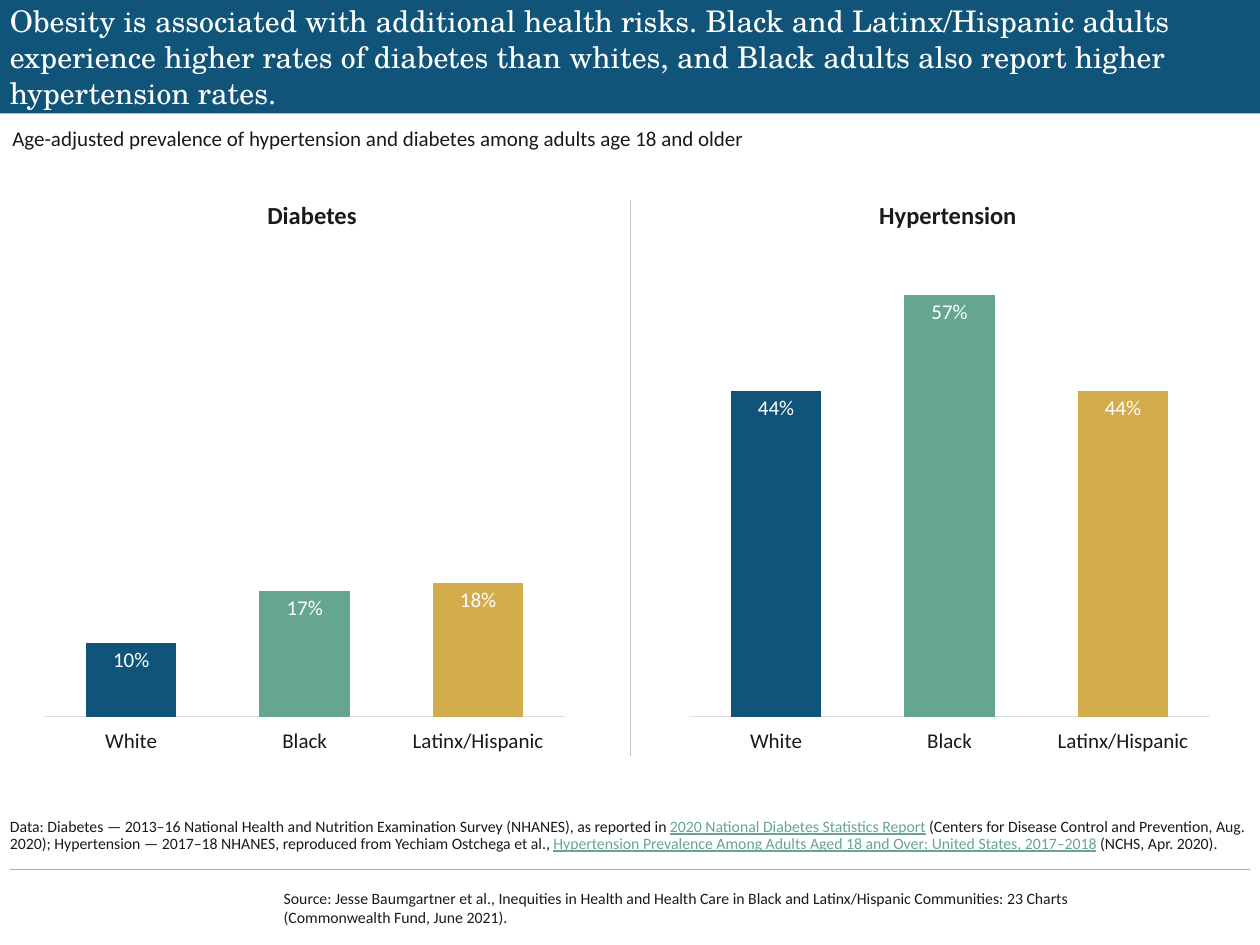
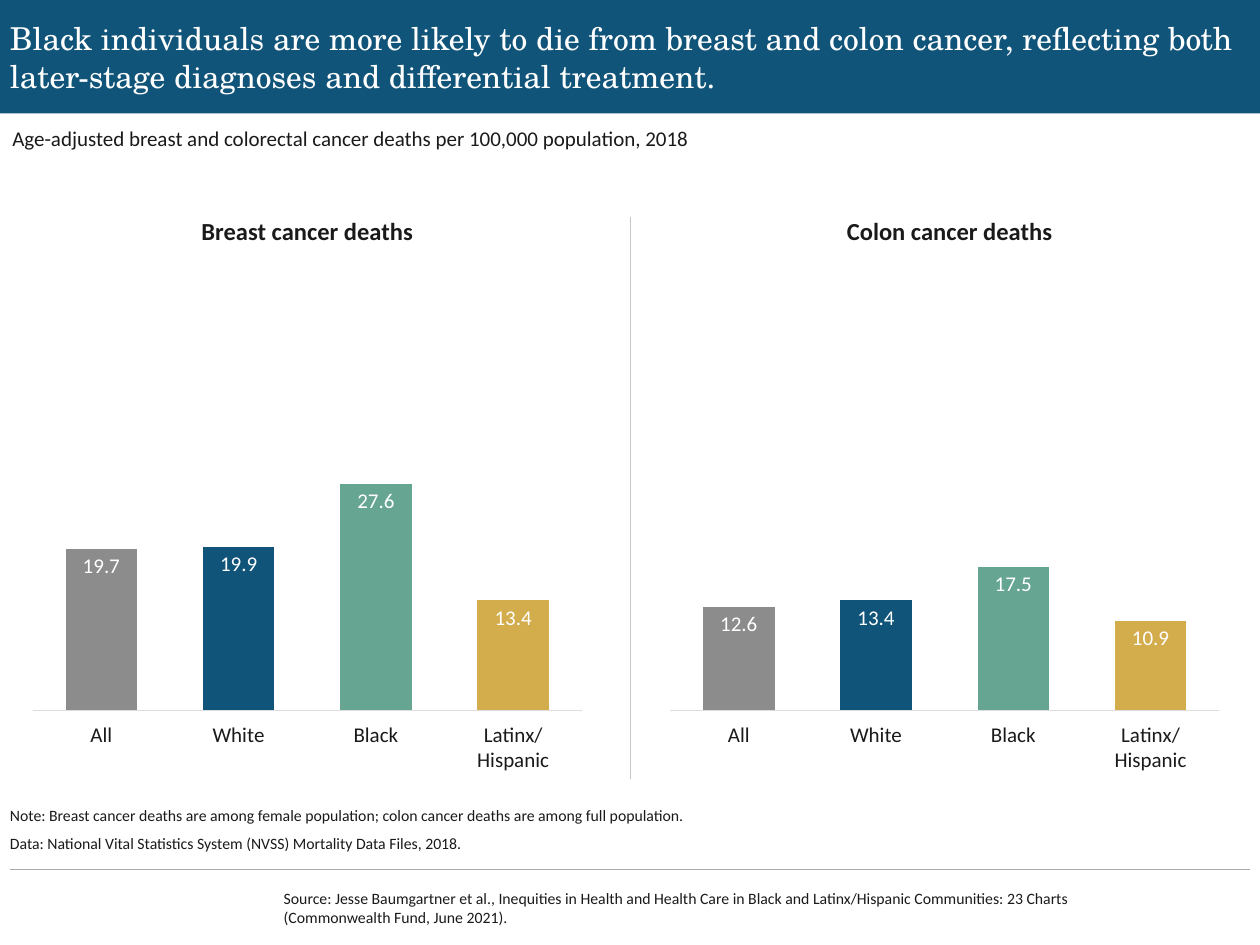
from dataclasses import dataclass
from pptx import Presentation
from pptx.chart.data import CategoryChartData
from pptx.dml.color import RGBColor
from pptx.enum.chart import XL_CHART_TYPE, XL_LABEL_POSITION, XL_TICK_LABEL_POSITION, XL_TICK_MARK
from pptx.enum.shapes import MSO_CONNECTOR, MSO_SHAPE
from pptx.enum.text import MSO_ANCHOR, MSO_AUTO_SIZE, PP_ALIGN
from pptx.oxml.xmlchemy import OxmlElement
from pptx.util import Cm, Pt


@dataclass(frozen=True)
class Theme:
    sans: str = "Calibri"
    serif: str = "TeX Gyre Schola"
    ink: str = "1A1A1A"
    white: str = "FFFFFF"
    navy: str = "115479"
    green: str = "65A591"
    gold: str = "D3AC4C"
    gray: str = "8C8C8C"
    axis: str = "DDDDDD"
    rule: str = "ABABAB"
    split: str = "C6C6C6"
    small: int = 9
    body: int = 12
    head: int = 14


THEME = Theme()
WIDTH, HEIGHT, EDGE = 25.4, 19.05, 0.2
INNER = WIDTH - 2 * EDGE
BAND = (EDGE, 0, INNER, 2.29)
NOTES = (EDGE, 15.82, INNER, 1.37)
SOURCE = (
    "Source: Jesse Baumgartner et al., Inequities in Health and Health Care in Black and "
    "Latinx/Hispanic Communities: 23 Charts (Commonwealth Fund, June 2021)."
)
HUES = {
    "All": THEME.gray,
    "White": THEME.navy,
    "Black": THEME.green,
    "Latinx/Hispanic": THEME.gold,
    "Latinx/\nHispanic": THEME.gold,
}


def paint(part, hue):
    part.solid()
    part.fore_color.rgb = RGBColor.from_string(hue)


def style(font, size, hue, face=THEME.sans, bold=False):
    font.name, font.size, font.bold = face, Pt(size), bold
    font.color.rgb = RGBColor.from_string(hue)


def place(shape, box):
    shape.left, shape.top, shape.width, shape.height = map(Cm, box)


def text(shape, lines, size=THEME.body, hue=THEME.ink, face=THEME.sans, bold=False,
         align=PP_ALIGN.LEFT, anchor=MSO_ANCHOR.TOP, inset=True, lead=1.0, after=0):
    frame = shape.text_frame
    frame.word_wrap = True
    frame.auto_size = MSO_AUTO_SIZE.NONE
    frame.vertical_anchor = anchor
    if not inset:
        frame.margin_left = frame.margin_right = frame.margin_top = frame.margin_bottom = 0
    for row, line in enumerate(lines):
        para = frame.add_paragraph() if row else frame.paragraphs[0]
        props = para._p.get_or_add_pPr()
        props.set("marL", "0")
        props.set("indent", "0")
        props.append(OxmlElement("a:buNone"))
        para.alignment, para.line_spacing = align, lead
        para.space_before, para.space_after = Pt(0), Pt(after)
        for spot, piece in enumerate(line.split("|")):
            run = para.add_run()
            run.text = piece
            cited = spot % 2 == 1
            style(run.font, size, THEME.green if cited else hue, face, bold)
            run.font.underline = cited


def label(slide, box, line, **form):
    shape = slide.shapes.add_textbox(*map(Cm, box))
    text(shape, [line], **form)
    return shape


def stroke(slide, ends, hue, weight):
    line = slide.shapes.add_connector(MSO_CONNECTOR.STRAIGHT, *map(Cm, ends))
    line.line.color.rgb = RGBColor.from_string(hue)
    line.line.width = Pt(weight)
    line.element.spPr.append(OxmlElement("a:effectLst"))
    return line


def share(slide):
    band = slide.shapes.add_shape(MSO_SHAPE.RECTANGLE, 0, 0, Cm(WIDTH), Cm(BAND[3]))
    band.shadow.inherit = False
    paint(band.fill, THEME.navy)
    band.line.fill.background()
    rule = stroke(slide, (EDGE, 17.53, WIDTH - EDGE, 17.53), THEME.rule, 0.75)
    source = label(slide, (5.72, 17.91, 17.91, 0.76), SOURCE, size=THEME.small,
                   anchor=MSO_ANCHOR.MIDDLE, inset=False)
    for spot, part in enumerate((band, rule, source)):
        part.element.xpath(".//p:cNvPr")[0].set("id", str(20 + spot))
        slide.slide_layout.shapes.element.append(part.element)


def fit(chart, plot):
    area = chart.element.xpath(".//c:plotArea")[0]
    for old in area.xpath("./c:layout"):
        area.remove(old)
    layout, manual = OxmlElement("c:layout"), OxmlElement("c:manualLayout")
    modes = [("layoutTarget", "inner"), ("xMode", "edge"), ("yMode", "edge")]
    for tag, val in modes + list(zip("xywh", plot)):
        item = OxmlElement(f"c:{tag}")
        item.set("val", str(val))
        manual.append(item)
    layout.append(manual)
    area.insert(0, layout)


def bars(slide, box, names, vals, form, plot):
    data = CategoryChartData(number_format="General")
    data.categories = names
    data.add_series("Series 1", vals)
    chart = slide.shapes.add_chart(XL_CHART_TYPE.COLUMN_CLUSTERED, *map(Cm, box), data).chart
    chart.has_title = chart.has_legend = False
    style(chart.font, THEME.body, THEME.ink)
    fit(chart, plot)
    rise = chart.value_axis
    rise.minimum_scale, rise.maximum_scale = 0, 60
    rise.has_major_gridlines = rise.visible = False
    base = chart.category_axis
    base.major_tick_mark = base.minor_tick_mark = XL_TICK_MARK.NONE
    base.tick_label_position = XL_TICK_LABEL_POSITION.LOW
    base.format.line.color.rgb = RGBColor.from_string(THEME.axis)
    base.format.line.width = Pt(0.75)
    style(base.tick_labels.font, THEME.body, THEME.ink)
    group = chart.plots[0]
    group.gap_width, group.vary_by_categories = 92, False
    series = group.series[0]
    paint(series.format.fill, THEME.navy)
    for spot, name in enumerate(names):
        paint(series.points[spot].format.fill, HUES[name])
    marks = series.data_labels
    marks.show_value, marks.position = True, XL_LABEL_POSITION.INSIDE_END
    marks.number_format, marks.number_format_is_linked = form, False
    style(marks.font, THEME.body, THEME.white)


def panel(slide, box, top, head, shift, names, vals, form, plot):
    left, _, width, _ = box
    span = 8.8
    bars(slide, box, names, vals, form, plot)
    label(slide, (left + (width - span) / 2 + shift, top, span, 0.86), head,
          size=THEME.head, bold=True, align=PP_ALIGN.CENTER)


def page(deck, title, size, lead, notes, names, form, plot, chart, top, foot, panels):
    slide = deck.slides.add_slide(deck.slide_layouts[1])
    head, body = slide.placeholders
    place(head, BAND)
    text(head, [title], size=size, hue=THEME.white, face=THEME.serif,
         anchor=MSO_ANCHOR.MIDDLE, inset=False)
    place(body, NOTES)
    text(body, notes, size=THEME.small, anchor=MSO_ANCHOR.BOTTOM, inset=False,
         lead=0.9, after=6)
    label(slide, (0, 2.4, 22.45, 0.76), lead)
    for left, name, shift, vals in panels:
        panel(slide, (left, *chart), top, name, shift, names, vals, form, plot)
    stroke(slide, (WIDTH / 2, top + 0.13, WIDTH / 2, foot), THEME.split, 0.5)
    return slide


def main():
    deck = Presentation()
    deck.slide_width, deck.slide_height = Cm(WIDTH), Cm(HEIGHT)
    risks = page(
        deck,
        title="Obesity is associated with additional health risks. Black and Latinx/Hispanic "
              "adults experience higher rates of diabetes than whites, and Black adults also "
              "report higher hypertension rates.",
        size=17,
        lead="Age-adjusted prevalence of hypertension and diabetes among adults age 18 and older",
        notes=["Data: Diabetes — 2013–16 National Health and Nutrition Examination Survey "
               "(NHANES), as reported in |2020 National Diabetes Statistics Report| (Centers for "
               "Disease Control and Prevention, Aug. 2020); Hypertension — 2017–18 NHANES, "
               "reproduced from Yechiam Ostchega et al., |Hypertension Prevalence Among Adults "
               "Aged 18 and Over: United States, 2017–2018| (NCHS, Apr. 2020)."],
        names=["White", "Black", "Latinx/Hispanic"],
        form='#"%"',
        plot=(0.03, 0.02, 0.93, 0.85),
        chart=(5.28, 11.28, 10.54),
        top=3.91,
        foot=15.24,
        panels=[(0.56, "Diabetes", 0.09, (10, 17, 18)),
                (13.56, "Hypertension", -0.09, (44, 57, 44))],
    )
    share(risks)
    page(
        deck,
        title="Black individuals are more likely to die from breast and colon cancer, "
              "reflecting both later-stage diagnoses and differential treatment.",
        size=18,
        lead="Age-adjusted breast and colorectal cancer deaths per 100,000 population, 2018",
        notes=["Note: Breast cancer deaths are among female population; colon cancer deaths "
               "are among full population.",
               "Data: National Vital Statistics System (NVSS) Mortality Data Files, 2018."],
        names=["All", "White", "Black", "Latinx/\nHispanic"],
        form="0.0",
        plot=(0.02, 0.02, 0.96, 0.86),
        chart=(4.19, 11.53, 11.51),
        top=4.24,
        foot=15.7,
        panels=[(0.43, "Breast cancer deaths", 0, (19.7, 19.9, 27.6, 13.4)),
                (13.28, "Colon cancer deaths", 0.1, (12.6, 13.4, 17.5, 10.9))],
    )
    deck.save("out.pptx")


if __name__ == "__main__":
    main()
